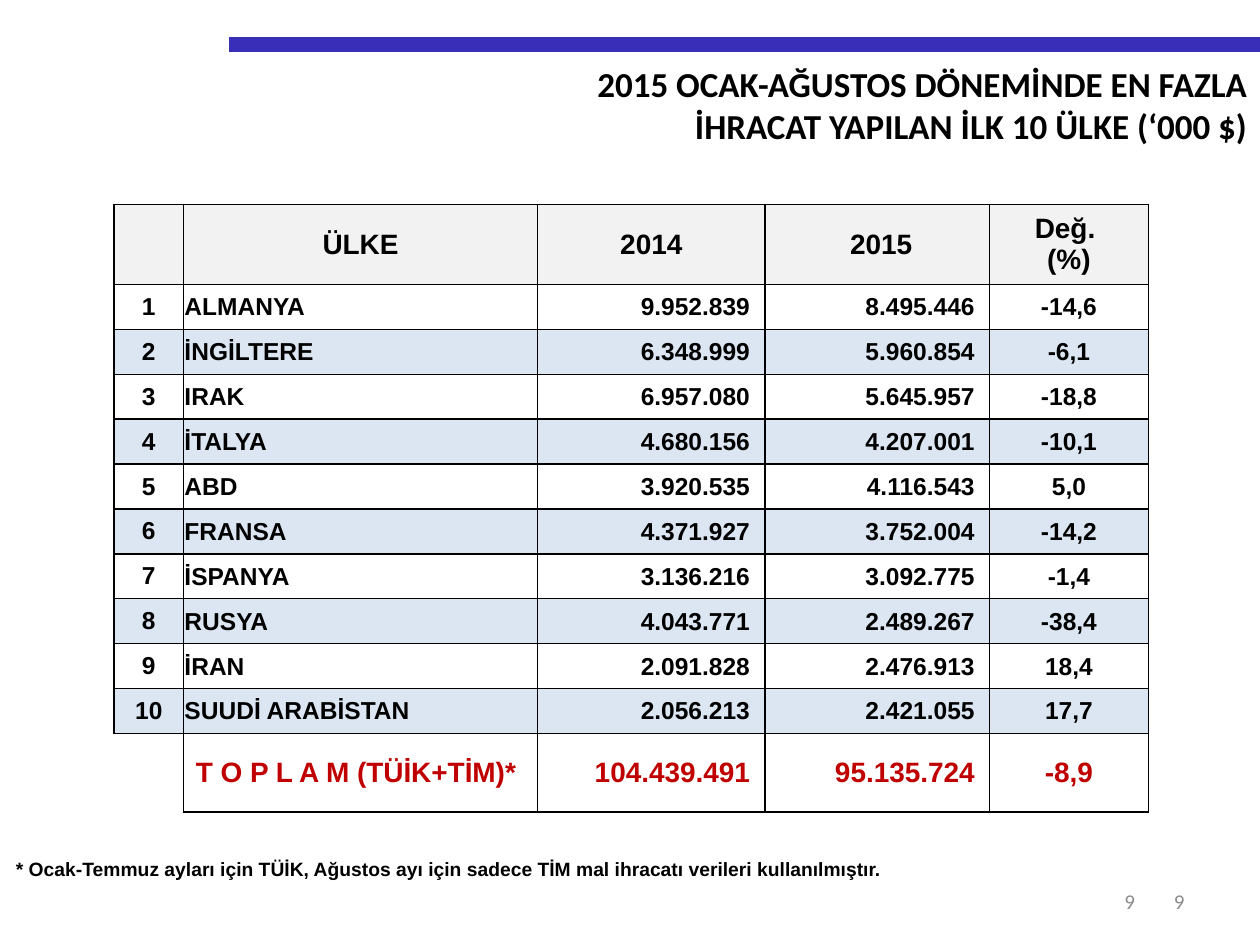
from dataclasses import dataclass

from lxml.etree import SubElement
from pptx import Presentation
from pptx.dml.color import RGBColor
from pptx.enum.shapes import MSO_CONNECTOR
from pptx.enum.text import MSO_ANCHOR, PP_ALIGN
from pptx.oxml.ns import qn
from pptx.util import Cm, Pt


@dataclass(frozen=True)
class Theme:
    bar: str = "382EB8"
    ink: str = "000000"
    total: str = "C00000"
    muted: str = "8C8C8C"
    header_fill: str = "F2F2F2"
    band_fill: str = "DCE6F2"
    title_font: str = "Calibri"
    table_font: str = "Arial"
    title_size: int = 20
    head_size: int = 16
    body_size: int = 14
    page_size: int = 12
    note_size: int = 11


THEME = Theme()
LEFT, CENTER, RIGHT = PP_ALIGN.LEFT, PP_ALIGN.CENTER, PP_ALIGN.RIGHT

# Cell margins in cm: left, top, right, bottom
WIDE = (0.25, 0.13, 0.25, 0.13)
TIGHT = (0.02, 0.02, 0.02, 0)
NUMBER = (0.02, 0.02, 0.3, 0)

COLUMNS = (1.4, 7.14, 4.58, 4.53, 3.2)
HEADER_HEIGHT, BODY_HEIGHT, TOTAL_HEIGHT = 1.6, 9.05, 1.58
HEADER = ("", "ÜLKE", "2014", " 2015", "Değ. \n(%)")
COUNTRIES = (
    ("ALMANYA", "9.952.839", "8.495.446", "-14,6"),
    ("İNGİLTERE", "6.348.999", "5.960.854", "-6,1"),
    ("IRAK", "6.957.080", "5.645.957", "-18,8"),
    ("İTALYA", "4.680.156", "4.207.001", "-10,1"),
    ("ABD", "3.920.535", "4.116.543", "5,0"),
    ("FRANSA", "4.371.927", "3.752.004", "-14,2"),
    ("İSPANYA", "3.136.216", "3.092.775", "-1,4"),
    ("RUSYA", "4.043.771", "2.489.267", "-38,4"),
    ("İRAN", "2.091.828", "2.476.913", "18,4"),
    ("SUUDİ ARABİSTAN", "2.056.213", "2.421.055", "17,7"),
)
TOTAL = ("", "T O P L A M (TÜİK+TİM)*", "104.439.491", "95.135.724", "-8,9")
NOTE = ("* Ocak-Temmuz ayları için TÜİK, Ağustos ayı için sadece "
        "TİM mal ihracatı verileri kullanılmıştır.")


def write(tf, text, align, size, font, color=THEME.ink, bold=True):
    """Fill a text frame, one paragraph per line."""
    tf.word_wrap = True
    for i, line in enumerate(text.split("\n")):
        p = tf.paragraphs[0] if i == 0 else tf.add_paragraph()
        p.alignment = align
        r = p.add_run()
        r.text = line
        for name, value in {"size": Pt(size), "name": font, "bold": bold}.items():
            setattr(r.font, name, value)
        r.font.color.rgb = RGBColor.from_string(color)


def add_text(s, box, text, anchor=MSO_ANCHOR.TOP, **style):
    sp = s.shapes.add_textbox(*map(Cm, box))
    sp.text_frame.vertical_anchor = anchor
    write(sp.text_frame, text, RIGHT, font=THEME.title_font, **style)


def add_bar(s):
    sp = s.shapes.add_connector(MSO_CONNECTOR.STRAIGHT, Cm(4.62), Cm(0.9), Cm(25.4), Cm(0.9))
    sp.line.color.rgb = RGBColor.from_string(THEME.bar)
    sp.line.width = Pt(8.5)
    SubElement(sp._element.spPr, qn("a:effectLst"))


def add_plain_table(s, left, top, widths, heights):
    """Add a table without any built-in style."""
    frame = s.shapes.add_table(len(heights), len(widths), Cm(left), Cm(top),
                               Cm(sum(widths)), Cm(sum(heights)))
    table = frame.table
    table.first_row = table.horz_banding = False
    style = table._tbl.tblPr.find(qn("a:tableStyleId"))
    style.text = "{2D5ABB26-0587-4C30-8999-92F81FD0307C}"
    for column, width in zip(table.columns, widths):
        column.width = Cm(width)
    for row, height in zip(table.rows, heights):
        row.height = Cm(height)
    return table


def set_borders(cell, sides):
    for side in sides:
        ln = SubElement(cell._tc.get_or_add_tcPr(), qn(f"a:ln{side}"), w=str(Pt(1)))
        SubElement(SubElement(ln, qn("a:solidFill")), qn("a:srgbClr"), val=THEME.ink)


def format_cell(cell, text, align, margins, size, color=THEME.ink, fill=None, sides=""):
    set_borders(cell, sides)
    if fill:
        cell.fill.solid()
        cell.fill.fore_color.rgb = RGBColor.from_string(fill)
    else:
        cell.fill.background()
    cell.vertical_anchor = MSO_ANCHOR.MIDDLE
    for side, margin in zip(("left", "top", "right", "bottom"), margins):
        setattr(cell, f"margin_{side}", Cm(margin))
    if text:
        write(cell.text_frame, text, align, size, THEME.table_font, color)


def fill_row(table, row, values, aligns, margins, sides=("LRTB",) * 5, **style):
    for col, value in enumerate(values):
        format_cell(table.cell(row, col), value, aligns[col], margins[col],
                    sides=sides[col], **style)


def add_export_table(s):
    count = len(COUNTRIES)
    heights = (HEADER_HEIGHT, *[BODY_HEIGHT / count] * count, TOTAL_HEIGHT)
    table = add_plain_table(s, 2.3, 4.12, COLUMNS, heights)
    aligns = (CENTER, LEFT, RIGHT, RIGHT, CENTER)

    # Header
    fill_row(table, 0, HEADER, (CENTER,) * 5, (WIDE,) * 5,
             size=THEME.head_size, fill=THEME.header_fill)
    # Countries, every second row tinted
    for rank, country in enumerate(COUNTRIES, start=1):
        fill_row(table, rank, (str(rank), *country), aligns,
                 (WIDE, TIGHT, NUMBER, NUMBER, TIGHT), size=THEME.body_size,
                 fill=THEME.band_fill if rank % 2 == 0 else None)
    # Total, open at the lower left corner
    fill_row(table, count + 1, TOTAL, aligns, (WIDE, WIDE, NUMBER, NUMBER, TIGHT),
             sides=("RT", *["LRTB"] * 4), size=THEME.head_size, color=THEME.total)


def main():
    prs = Presentation()
    prs.slide_width, prs.slide_height = Cm(25.4), Cm(19.05)
    s = prs.slides.add_slide(prs.slide_layouts[6])

    # Top bar and title
    add_bar(s)
    add_text(s, (2.7, 1.14, 22.7, 1.96),
             "2015 OCAK-AĞUSTOS DÖNEMİNDE EN FAZLA\nİHRACAT YAPILAN İLK 10 ÜLKE (‘000 $)",
             size=THEME.title_size)

    # Export figures and footnote
    add_export_table(s)
    note = add_plain_table(s, 0.3, 17.12, (18.8,), (0.79,))
    format_cell(note.cell(0, 0), NOTE, LEFT, TIGHT, THEME.note_size)

    # Page numbers
    for left, width in ((18.21, 5.92), (17.8, 5.33)):
        add_text(s, (left, 17.65, width, 1.02), "9", MSO_ANCHOR.MIDDLE,
                 size=THEME.page_size, color=THEME.muted, bold=False)

    prs.save("out.pptx")


if __name__ == "__main__":
    main()
